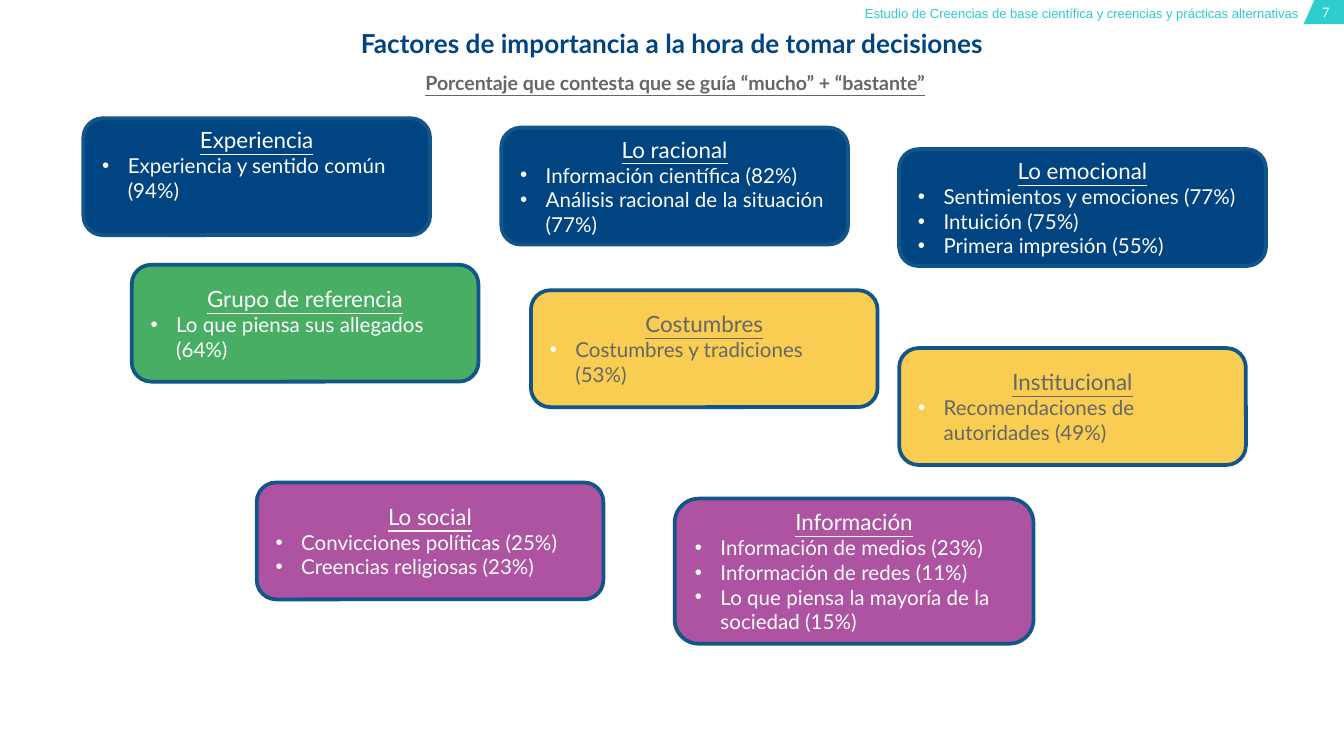
from lxml.etree import SubElement
from pptx import Presentation
from pptx.dml.color import RGBColor
from pptx.enum.shapes import MSO_SHAPE
from pptx.enum.text import MSO_ANCHOR, PP_ALIGN
from pptx.oxml.ns import qn
from pptx.util import Inches, Pt

NAVY = RGBColor(0x00, 0x44, 0x81)
BORDER = RGBColor(0x12, 0x55, 0x88)
GREEN = RGBColor(0x48, 0xAE, 0x64)
YELLOW = RGBColor(0xF8, 0xCD, 0x51)
PURPLE = RGBColor(0xAD, 0x53, 0xA1)
TEAL = RGBColor(0x2D, 0xCC, 0xCD)
GRAY = RGBColor(0x66, 0x66, 0x66)
WHITE = RGBColor(0xFF, 0xFF, 0xFF)

# Content
STUDY = "Estudio de Creencias de base científica y creencias y prácticas alternativas"
PAGE_NUMBER = "7"
TITLE = "Factores de importancia a la hora de tomar decisiones "
SUBTITLE = "Porcentaje que contesta que se guía “mucho” + “bastante”"

CARD_W, CARD_H = 2.58, 0.87
# heading, items, (left, top, width, height), fill, text colour
FACTORS = [
    ("Experiencia", ["Experiencia y sentido común (94%)"],
     (0.62, 0.88, CARD_W, CARD_H), NAVY, WHITE),
    ("Lo racional", ["Información científica (82%)",
                     "Análisis racional de la situación (77%)"],
     (3.73, 0.95, CARD_W, CARD_H), NAVY, WHITE),
    ("Lo emocional", ["Sentimientos y emociones (77%)", "Intuición (75%)",
                      "Primera impresión (55%)"],
     (6.69, 1.11, 2.73, CARD_H), NAVY, WHITE),
    ("Grupo de referencia", ["Lo que piensa sus allegados (64%)"],
     (0.98, 1.97, CARD_W, CARD_H), GREEN, WHITE),
    ("Costumbres", ["Costumbres y tradiciones (53%)"],
     (3.95, 2.16, CARD_W, CARD_H), YELLOW, GRAY),
    ("Institucional", ["Recomendaciones de autoridades (49%)"],
     (6.69, 2.59, CARD_W, CARD_H), YELLOW, GRAY),
    ("Lo social", ["Convicciones políticas (25%)", "Creencias religiosas (23%)"],
     (1.91, 3.59, CARD_W, CARD_H), PURPLE, WHITE),
    ("Información", ["Información de medios (23%)", "Información de redes (11%)",
                     "Lo que piensa la mayoría de la sociedad (15%)"],
     (5.02, 3.71, 2.67, 1.08), PURPLE, WHITE),
]
RAISED_TEXT = {"Experiencia": 0.23}  # bottom inset that lifts the text

# Widescreen 16:9 slide
prs = Presentation()
prs.slide_width = Inches(10)
prs.slide_height = Inches(10 * 9 / 16)
slide = prs.slides.add_slide(prs.slide_layouts[6])


def write(paragraph, text, size, color, align, font="Lato", bold=False, underline=False):
    paragraph.text = text
    paragraph.alignment = align
    style = paragraph.font
    style.name, style.size, style.bold, style.underline = font, Pt(size), bold, underline
    style.color.rgb = color


def add_text_frame(box):
    frame = slide.shapes.add_textbox(*map(Inches, box)).text_frame
    frame.word_wrap = True
    frame.margin_left = frame.margin_right = frame.margin_top = frame.margin_bottom = 0
    return frame


def add_bullet(paragraph):
    props = paragraph._p.get_or_add_pPr()
    props.set("marL", str(Inches(0.19)))
    props.set("indent", str(-Inches(0.19)))
    bullet_color = SubElement(props, qn("a:buClr"))
    SubElement(bullet_color, qn("a:srgbClr"), val=str(WHITE))
    SubElement(props, qn("a:buFont"), typeface="Arial")
    SubElement(props, qn("a:buChar"), char="•")


def add_card(heading, items, box, fill, color):
    card = slide.shapes.add_shape(MSO_SHAPE.ROUNDED_RECTANGLE, *map(Inches, box))
    card.shadow.inherit = False
    card.fill.solid()
    card.fill.fore_color.rgb = fill
    card.line.color.rgb = BORDER
    card.line.width = Pt(2)
    frame = card.text_frame
    frame.vertical_anchor = MSO_ANCHOR.MIDDLE
    frame.margin_bottom = Inches(RAISED_TEXT.get(heading, 0.05))
    write(frame.paragraphs[0], heading, 12, color, PP_ALIGN.CENTER, underline=True)
    for item in items:
        paragraph = frame.add_paragraph()
        add_bullet(paragraph)
        write(paragraph, item, 11, color, PP_ALIGN.LEFT)


# Page corner and running header
outline = slide.shapes.build_freeform(Inches(9.78), 0)
outline.add_line_segments(
    [(Inches(x), Inches(y)) for x, y in [(10, 0), (10, 0.18), (9.7, 0.18)]], close=True)
corner = outline.convert_to_shape()
corner.shadow.inherit = False
corner.fill.solid()
corner.fill.fore_color.rgb = TEAL
corner.line.fill.background()

page = add_text_frame((9.75, 0.03, 0.23, 0.12))
write(page.paragraphs[0], PAGE_NUMBER, 7, WHITE, PP_ALIGN.CENTER)
header = add_text_frame((6.4, 0.04, 3.26, 0.12))
write(header.paragraphs[0], STUDY, 7, TEAL, PP_ALIGN.RIGHT, font="Arial")

# Title with the subtitle on its second line
title = add_text_frame((0.62, 0.09, 8.81, 0.6)).paragraphs[0]
write(title, TITLE, 14, NAVY, PP_ALIGN.CENTER, bold=True)
title.line_spacing = 1.5
title.add_line_break()
subtitle = title.add_run()
subtitle.text = SUBTITLE
subtitle.font.size = Pt(10.5)
subtitle.font.underline = True
subtitle.font.color.rgb = GRAY

# Factor cards
for factor in FACTORS:
    add_card(*factor)

prs.save("out.pptx")
